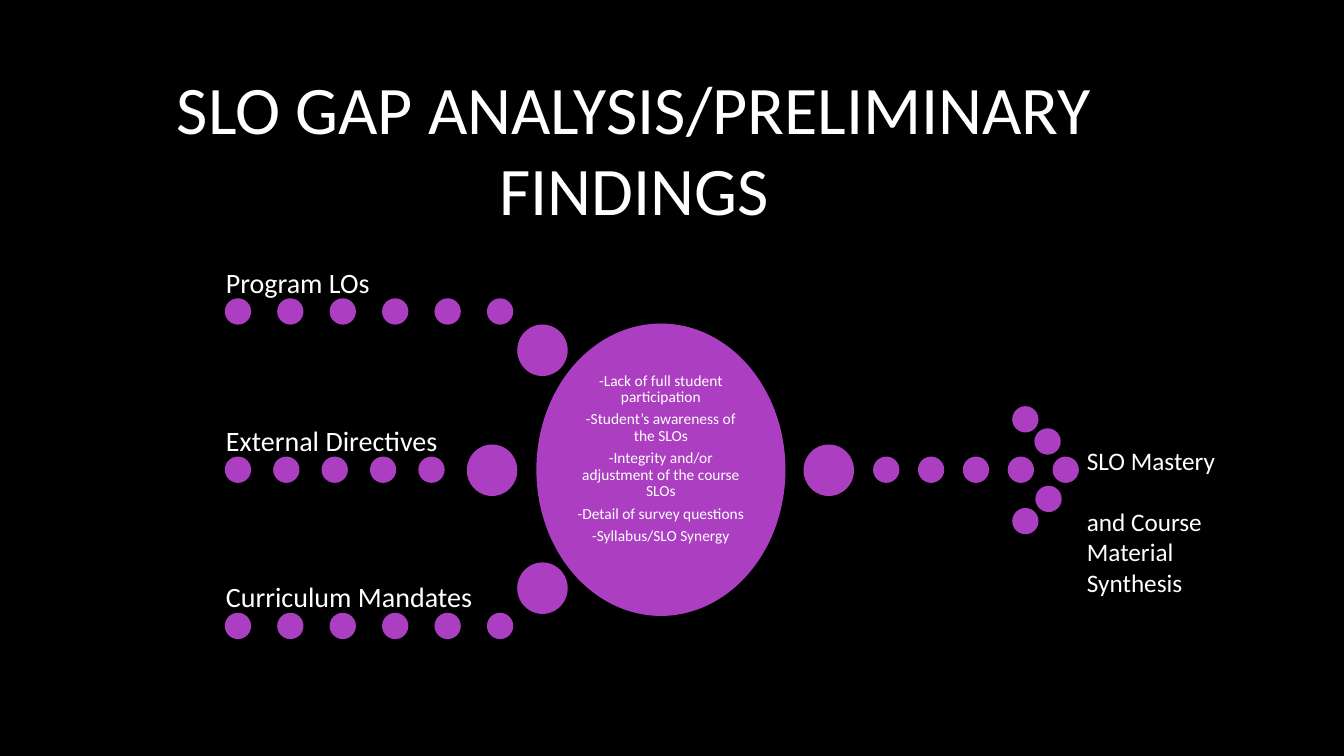
from pptx import Presentation
from pptx.dml.color import RGBColor
from pptx.enum.shapes import MSO_SHAPE
from pptx.enum.text import MSO_ANCHOR, MSO_AUTO_SIZE, PP_ALIGN
from pptx.util import Inches, Pt

OVAL = MSO_SHAPE.OVAL
TOP, MIDDLE, BOTTOM = MSO_ANCHOR.TOP, MSO_ANCHOR.MIDDLE, MSO_ANCHOR.BOTTOM
LEFT, CENTER = PP_ALIGN.LEFT, PP_ALIGN.CENTER
NO_AUTOFIT = MSO_AUTO_SIZE.NONE

BLACK = RGBColor(0x00, 0x00, 0x00)
WHITE = RGBColor(0xFF, 0xFF, 0xFF)
PURPLE = RGBColor(0xAC, 0x3E, 0xC1)

DOT = 0.24
NODE_WIDTH, NODE_HEIGHT = 0.48, 0.49
INPUT_LEFT = 2.24
LABEL_HEIGHT = 0.62

# label, label width, dot top, dot count, dot pitch, node left, node top
INPUTS = [
    ("Program LOs", 2.84, 2.97, 6, 0.52, 5.14, 3.23),
    ("External Directives", 2.15, 4.54, 5, 0.48, 4.64, 4.42),
    ("Curriculum Mandates", 2.84, 6.09, 6, 0.52, 5.14, 5.59),
]
ARROWHEAD_DOTS = [(10.05, 4.04), (10.27, 4.26), (10.28, 4.83), (10.05, 5.05)]
FINDINGS = [
    "-Lack of full student participation",
    "-Student’s awareness of the SLOs",
    "-Integrity and/or adjustment of the course SLOs",
    "-Detail of survey questions",
    "-Syllabus/SLO Synergy",
]
OUTCOME = ["SLO Mastery", "and Course", "Material", "Synthesis"]


class DiagramSlide:
    font = "Calibri"

    def __init__(self, presentation):
        self.slide = presentation.slides.add_slide(presentation.slide_layouts[5])
        self.slide.background.fill.solid()
        self.slide.background.fill.fore_color.rgb = BLACK

    def fill_text(self, frame, lines, size, align=LEFT, anchor=TOP,
                  insets=(0, 0, 0, 0), line_spacing=1.0, space_after=0):
        """Fill a text frame; insets run left, top, right, bottom in inches."""
        frame.word_wrap = True
        frame.auto_size = NO_AUTOFIT
        frame.vertical_anchor = anchor
        (frame.margin_left, frame.margin_top,
         frame.margin_right, frame.margin_bottom) = map(Inches, insets)
        frame.text = "\n".join(lines)
        for paragraph in frame.paragraphs:
            paragraph.alignment = align
            paragraph.line_spacing = line_spacing
            paragraph.space_after = Pt(space_after)
            for run in paragraph.runs:
                run.font.name = self.font
                run.font.size = Pt(size)
                run.font.color.rgb = WHITE

    def title(self, text, left, top, width, height):
        title = self.slide.shapes.title
        title.left, title.top = Inches(left), Inches(top)
        title.width, title.height = Inches(width), Inches(height)
        self.fill_text(title.text_frame, [text], 48.6, CENTER, MIDDLE,
                       (0.1, 0.05, 0.1, 0.05))

    def text(self, lines, left, top, width, height, size, **style):
        box = self.slide.shapes.add_textbox(
            Inches(left), Inches(top), Inches(width), Inches(height))
        self.fill_text(box.text_frame, lines, size, **style)
        return box

    def circle(self, left, top, width=DOT, height=DOT):
        circle = self.slide.shapes.add_shape(
            OVAL, Inches(left), Inches(top), Inches(width), Inches(height))
        circle.shadow.inherit = False
        circle.fill.solid()
        circle.fill.fore_color.rgb = PURPLE
        circle.line.color.rgb = PURPLE
        circle.line.width = Pt(1.5)
        return circle

    def node(self, left, top):
        self.circle(left, top, NODE_WIDTH, NODE_HEIGHT)

    def dot_row(self, left, top, count, pitch):
        for index in range(count):
            self.circle(left + index * pitch, top)


def main():
    presentation = Presentation()
    presentation.slide_width = Inches(13.33)
    presentation.slide_height = Inches(7.5)

    diagram = DiagramSlide(presentation)
    diagram.title("SLO GAP ANALYSIS/PRELIMINARY FINDINGS", 0.75, 0.67, 11.08, 1.59)

    for label, width, dot_top, count, pitch, node_left, node_top in INPUTS:
        diagram.dot_row(INPUT_LEFT, dot_top, count, pitch)
        diagram.node(node_left, node_top)
        diagram.text([label], INPUT_LEFT, dot_top - LABEL_HEIGHT, width,
                     LABEL_HEIGHT, 20, anchor=BOTTOM, line_spacing=0.9)

    hub = diagram.circle(5.33, 3.22, 2.45, 2.88)
    diagram.fill_text(hub.text_frame, FINDINGS, 11, CENTER, MIDDLE,
                      (0.02, 0.02, 0.02, 0.24), line_spacing=0.9, space_after=3.9)

    diagram.node(7.98, 4.42)
    diagram.dot_row(8.67, 4.54, 5, (10.45 - 8.67) / 4)
    for left, top in ARROWHEAD_DOTS:
        diagram.circle(left, top)

    outcome = diagram.text(OUTCOME, 10.57, 4.37, 1.61, 1.31, 18,
                           insets=(0.21, 0.05, 0, 0.05))
    outcome.text_frame.paragraphs[0].space_after = Pt(22)

    presentation.save("out.pptx")


if __name__ == "__main__":
    main()
